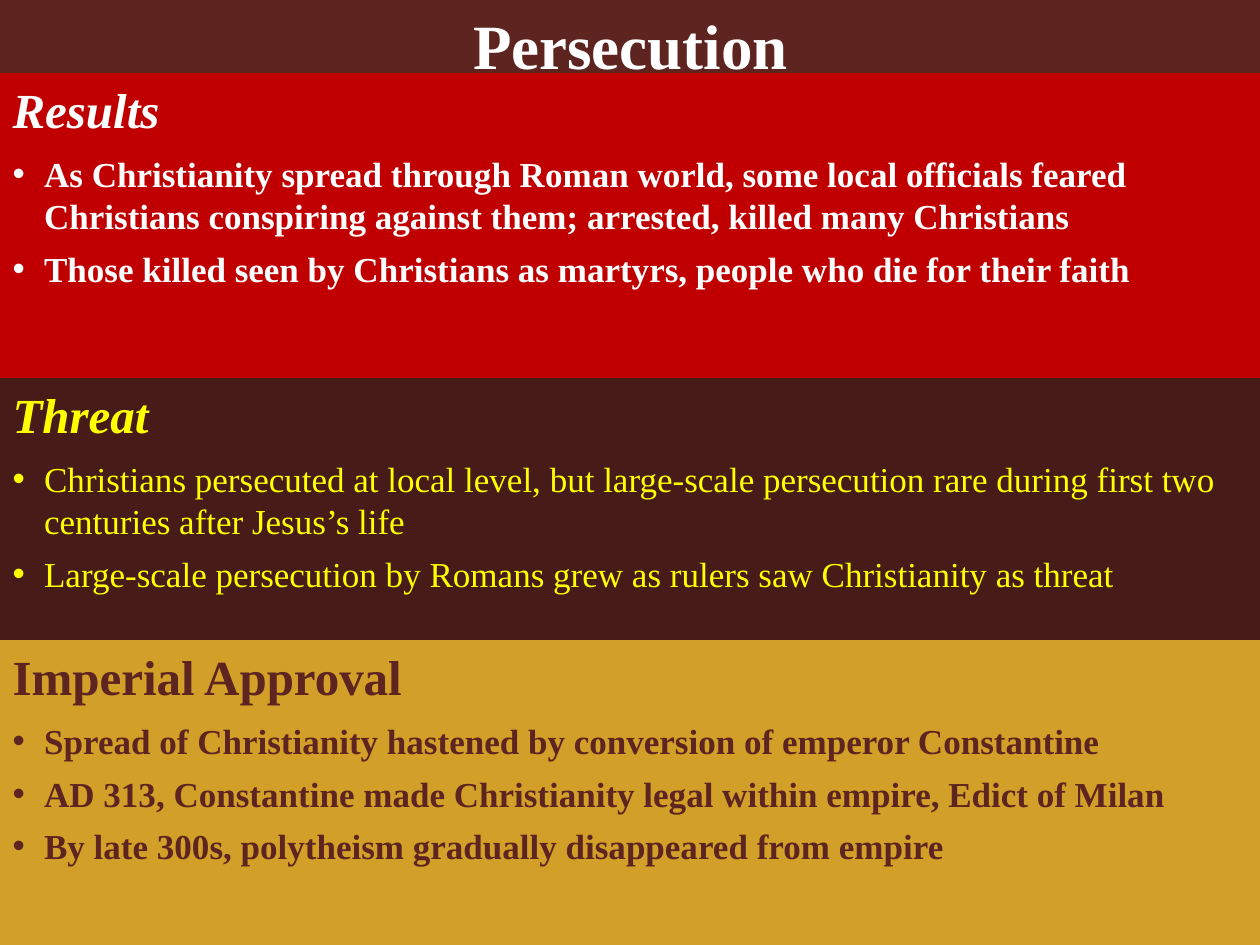
from lxml.etree import SubElement
from pptx import Presentation
from pptx.dml.color import RGBColor
from pptx.enum.text import MSO_ANCHOR as Anchor, MSO_AUTO_SIZE as AutoSize, PP_ALIGN as Align
from pptx.oxml.ns import qn
from pptx.util import Inches, Pt

FONT = "Times New Roman"
WHITE = RGBColor(0xFF, 0xFF, 0xFF)
YELLOW = RGBColor(0xFF, 0xFF, 0x00)
BROWN = RGBColor(0x5E, 0x24, 0x20)
DARK_BROWN = RGBColor(0x46, 0x1B, 0x18)
RED = RGBColor(0xC0, 0x00, 0x00)
GOLD = RGBColor(0xD2, 0x9F, 0x29)

SECTIONS = [
    dict(height=2.42, fill=RED, color=WHITE, italic_heading=True, bold_points=True,
         heading="Results",
         points=["As Christianity spread through Roman world, some local officials feared "
                 "Christians conspiring against them; arrested, killed many Christians",
                 "Those killed seen by Christians as martyrs, people who die for their faith"]),
    dict(height=2.08, fill=DARK_BROWN, color=YELLOW, italic_heading=True, bold_points=False,
         heading="Threat",
         points=["Christians persecuted at local level, but large-scale persecution rare "
                 "during first two centuries after Jesus’s life",
                 "Large-scale persecution by Romans grew as rulers saw Christianity as threat"]),
    dict(height=2.42, fill=GOLD, color=BROWN, italic_heading=False, bold_points=True,
         heading="Imperial Approval",
         points=["Spread of Christianity hastened by conversion of emperor Constantine",
                 "AD 313, Constantine made Christianity legal within empire, Edict of Milan",
                 "By late 300s, polytheism gradually disappeared from empire"]),
]


def place(holder, left, top, width, height):
    holder.left, holder.top = Inches(left), Inches(top)
    holder.width, holder.height = Inches(width), Inches(height)
    frame = holder.text_frame
    frame.word_wrap = True
    frame.auto_size = AutoSize.NONE
    frame.vertical_anchor = Anchor.TOP
    frame.margin_left = frame.margin_right = Inches(0.1)
    frame.margin_top, frame.margin_bottom = Inches(0.05), Inches(0)
    return frame


def style_runs(paragraph, size, color, bold, italic):
    for run in paragraph.runs:
        run.font.name = FONT
        run.font.size = Pt(size)
        run.font.color.rgb = color
        run.font.bold = bold
        run.font.italic = italic


def set_bullet(paragraph, bulleted):
    properties = paragraph._p.get_or_add_pPr()
    properties.set("marL", str(Inches(0.25)))
    properties.set("indent", str(-Inches(0.25)))
    if bulleted:
        SubElement(properties, qn("a:buFont"), typeface="Arial")
        SubElement(properties, qn("a:buChar"), char="•")
    else:
        SubElement(properties, qn("a:buNone"))


def add_title(title, left, top, width, height):
    frame = place(title, left, top, width, height)
    frame.text = "Persecution"
    heading = frame.paragraphs[0]
    heading.alignment = Align.CENTER
    heading.line_spacing = 1.0
    style_runs(heading, 36, WHITE, True, False)


def add_section(body, section, left, top, width, height):
    body.fill.solid()
    body.fill.fore_color.rgb = section["fill"]
    frame = place(body, left, top, width, height)
    frame.text = "\n".join([section["heading"], *section["points"]])
    for index, paragraph in enumerate(frame.paragraphs):
        is_point = index > 0
        size = 20 if is_point else 28
        set_bullet(paragraph, is_point)
        paragraph.alignment = Align.LEFT
        paragraph.line_spacing = 1.0
        paragraph.space_before = Pt(0)
        paragraph.space_after = Pt(0.3 * size)
        style_runs(paragraph, size, section["color"],
                   section["bold_points"] or not is_point,
                   section["italic_heading"] and not is_point)


def main():
    deck = Presentation()
    deck.slide_width, deck.slide_height = Inches(10), Inches(7.5)
    slide = deck.slides.add_slide(deck.slide_layouts.get_by_name("Comparison"))
    slide.background.fill.solid()
    slide.background.fill.fore_color.rgb = BROWN

    title, *bodies = slide.placeholders
    top = 0.58
    for body, section in zip(bodies, SECTIONS):
        add_section(body, section, 0, top, 10, section["height"])
        top += section["height"]
    for unused in bodies[len(SECTIONS):]:
        unused.element.getparent().remove(unused.element)

    add_title(title, 0.67, 0, 8.67, 0.58)
    title.element.getparent().append(title.element)

    deck.save("out.pptx")


if __name__ == "__main__":
    main()
